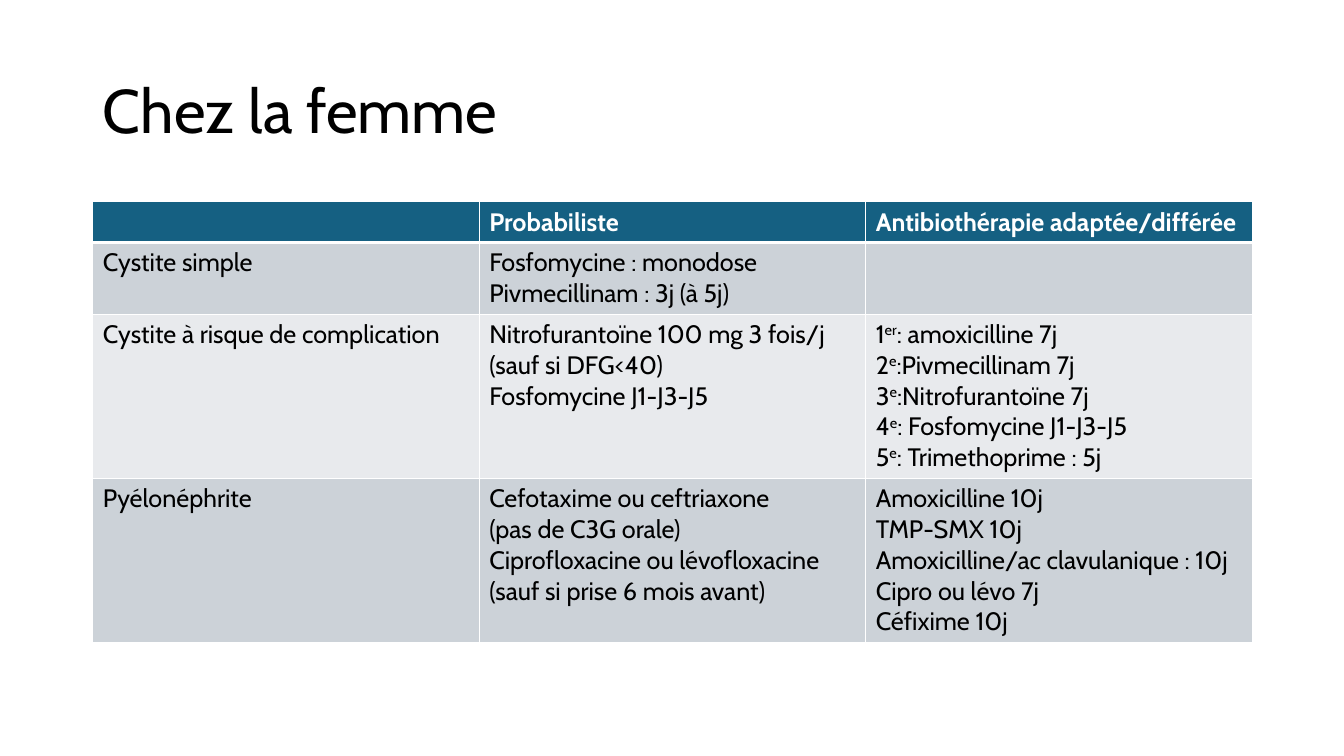
from lxml.etree import SubElement
from pptx import Presentation
from pptx.dml.color import RGBColor
from pptx.enum.text import MSO_ANCHOR as Anchor, PP_ALIGN as Align
from pptx.oxml.ns import qn
from pptx.util import Inches, Pt


def colour(value):
    return RGBColor.from_string(value)


class PageBuilder:
    font = "Cabin"
    dark = "000000"
    light = "FFFFFF"
    header = "156082"
    bands = ("CCD2D8", "E8EAED")

    def __init__(self, deck):
        self.page = deck.slides.add_slide(deck.slide_layouts[5])

    def span(self, para, text, size, ink, bold=False, raised=False):
        run = para.add_run()
        run.text = text
        run.font.name = self.font
        run.font.size = Pt(size)
        run.font.bold = bold
        run.font.color.rgb = colour(ink)
        if raised:
            run.font._element.set("baseline", "30000")

    def title(self, text, left, top, width, height):
        box = self.page.shapes.title
        box.left, box.top = Inches(left), Inches(top)
        box.width, box.height = Inches(width), Inches(height)
        frame = box.text_frame
        frame.word_wrap = True
        frame.vertical_anchor = Anchor.MIDDLE
        para = frame.paragraphs[0]
        para.alignment = Align.LEFT
        para.line_spacing = 0.9
        self.span(para, text, 44, self.dark)

    def borders(self, cell, top, bottom):
        properties = cell._tc.get_or_add_tcPr()
        widths = {"lnL": 1, "lnR": 1, "lnT": top, "lnB": bottom}
        for side, width in widths.items():
            line = SubElement(properties, qn(f"a:{side}"), w=str(Pt(width)))
            fill = SubElement(line, qn("a:solidFill"))
            SubElement(fill, qn("a:srgbClr"), val=self.light)

    def cell(self, cell, lines, row):
        heading = row == 0
        self.borders(cell, 3 if row == 1 else 1, 3 if heading else 1)
        cell.fill.solid()
        cell.fill.fore_color.rgb = colour(
            self.header if heading else self.bands[(row - 1) % 2])
        ink = self.light if heading else self.dark
        frame = cell.text_frame
        for index, line in enumerate(lines):
            para = frame.add_paragraph() if index else frame.paragraphs[0]
            parts = (line,) if isinstance(line, str) else line
            for order, text in enumerate(parts):
                self.span(para, text, 18, ink, heading, order == 1)

    def table(self, rows, left, top, width, heights):
        columns = len(rows[0])
        grid = self.page.shapes.add_table(
            len(rows), columns, Inches(left), Inches(top),
            Inches(width), Inches(sum(heights))).table
        for column in grid.columns:
            column.width = Inches(width / columns)
        for row, (entries, height) in enumerate(zip(rows, heights)):
            grid.rows[row].height = Inches(height)
            for column, lines in enumerate(entries):
                self.cell(grid.cell(row, column), lines, row)


TREATMENTS = [
    [[], ["Probabiliste"], ["Antibiothérapie adaptée/différée"]],
    [
        ["Cystite simple"],
        ["Fosfomycine : monodose", "Pivmecillinam : 3j (à 5j)"],
        [],
    ],
    [
        ["Cystite à risque de complication"],
        ["Nitrofurantoïne 100 mg 3 fois/j (sauf si DFG<40)",
         "Fosfomycine J1-J3-J5"],
        [("1", "er", ": amoxicilline 7j"),
         ("2", "e", ":Pivmecillinam 7j"),
         ("3", "e", ":Nitrofurantoïne 7j"),
         ("4", "e", ": Fosfomycine J1-J3-J5"),
         ("5", "e", ": Trimethoprime : 5j")],
    ],
    [
        ["Pyélonéphrite"],
        ["Cefotaxime ou ceftriaxone",
         "(pas de C3G orale)",
         "Ciprofloxacine ou lévofloxacine",
         "(sauf si prise 6 mois avant)"],
        ["Amoxicilline 10j",
         "TMP-SMX 10j",
         "Amoxicilline/ac clavulanique : 10j",
         "Cipro ou lévo 7j",
         "Céfixime 10j"],
    ],
]


def main():
    deck = Presentation()
    deck.slide_width, deck.slide_height = Inches(13.33), Inches(7.5)
    builder = PageBuilder(deck)
    builder.title("Chez la femme", 0.92, 0.4, 11.5, 1.45)
    builder.table(TREATMENTS, 0.92, 2, 11.5, (0.4, 0.71, 1.63, 1.63))
    deck.save("out.pptx")


if __name__ == "__main__":
    main()
